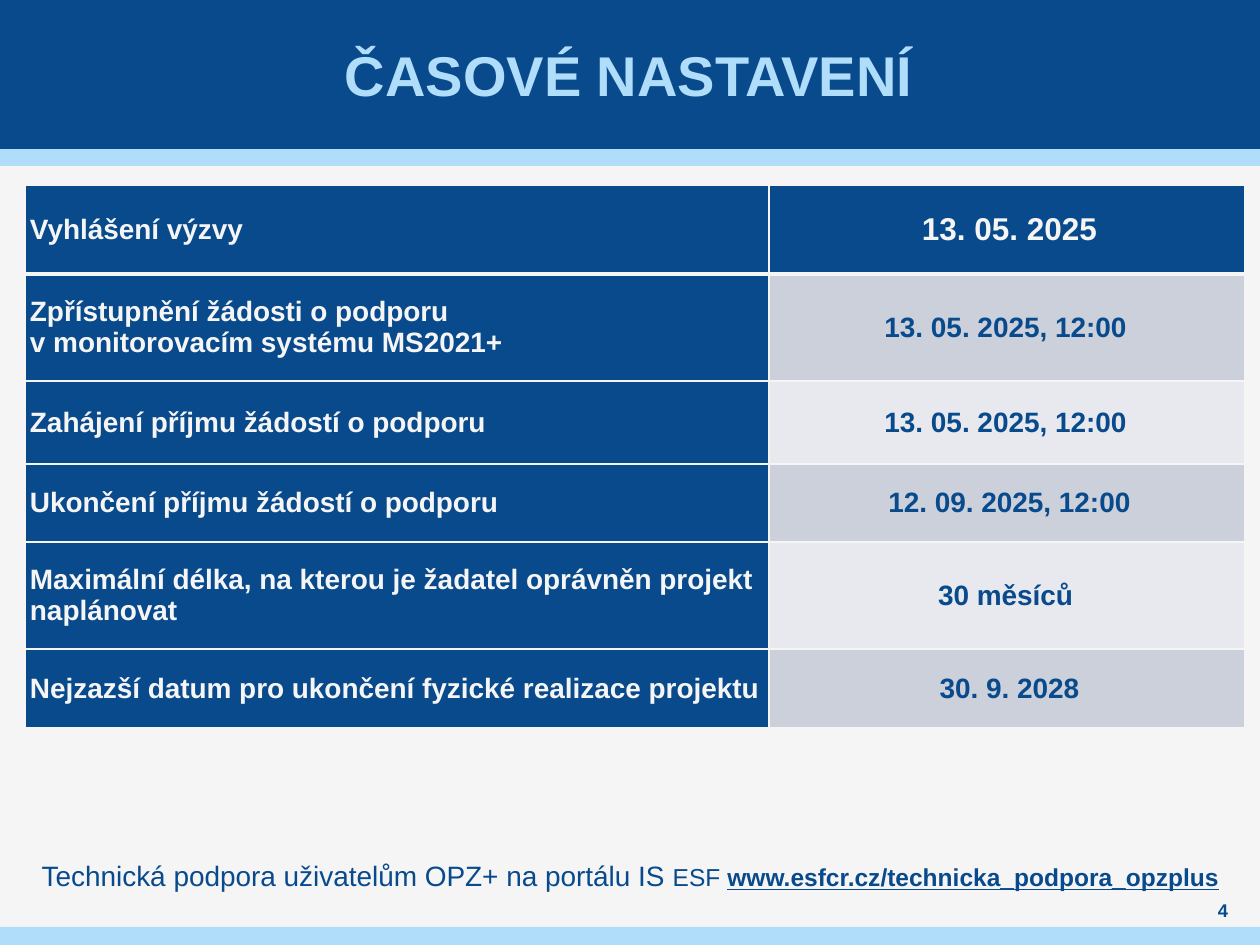
import pptx
import pptx.dml.color
import pptx.enum.shapes
import pptx.enum.text
import pptx.oxml
import pptx.oxml.ns
import pptx.util

PX = 914400 // 126
NAVY = pptx.dml.color.RGBColor(0x08, 0x4A, 0x8B)
SKY = pptx.dml.color.RGBColor(0xAF, 0xDD, 0xFA)
PAPER = pptx.dml.color.RGBColor(0xF5, 0xF5, 0xF5)
BANDS = [
    pptx.dml.color.RGBColor(0xE7, 0xE9, 0xEE),
    pptx.dml.color.RGBColor(0xCC, 0xD0, 0xDA),
]
LEFT = pptx.enum.text.PP_ALIGN.LEFT
CENTER = pptx.enum.text.PP_ALIGN.CENTER
MIDDLE = pptx.enum.text.MSO_ANCHOR.MIDDLE
TOP = pptx.enum.text.MSO_ANCHOR.TOP

TITLE = "ČASOVÉ NASTAVENÍ"
BARS = [
    ((0, 149, 1260, 17), SKY),
    ((0, 0, 1260, 149), NAVY),
    ((0, 927, 1260, 18), SKY),
]
SCHEDULE = [
    ("Vyhlášení výzvy", "13. 05. 2025", 89),
    ("Zpřístupnění žádosti o podporu \vv monitorovacím systému MS2021+", "13. 05. 2025, 12:00 ", 107),
    ("Zahájení příjmu žádostí o podporu", "13. 05. 2025, 12:00 ", 83),
    ("Ukončení příjmu žádostí o podporu", "12. 09. 2025, 12:00", 78),
    ("Maximální délka, na kterou je žadatel oprávněn projekt naplánovat", "30 měsíců ", 107),
    ("Nejzazší datum pro ukončení fyzické realizace projektu", "30. 9. 2028", 79),
]
COLUMN_WIDTHS = [744, 476]
SUPPORT = [
    ("Technická podpora uživatelům OPZ+ na portálu IS ", {"size": 16}),
    ("ESF ", {"size": 14}),
    ("www.esfcr.cz/technicka_podpora_opzplus", {"size": 14, "bold": True, "underline": True}),
]
PAGE_NUMBER = [("4", {"size": 10.5, "bold": True})]


def scaled(box):
    return [length * PX for length in box]


def format_frame(frame, anchor, side=0):
    settings = {
        "word_wrap": True,
        "vertical_anchor": anchor,
        "margin_left": side * PX,
        "margin_right": side * PX,
        "margin_top": 0,
        "margin_bottom": 0,
    }
    for name, value in settings.items():
        setattr(frame, name, value)


def write_runs(paragraph, runs, color, alignment, spacing=0):
    paragraph.alignment = alignment
    paragraph.space_before = paragraph.space_after = pptx.util.Pt(spacing)
    for text, style in runs:
        first = len(paragraph.runs)
        for index, line in enumerate(text.split("\v")):
            if index:
                paragraph.add_line_break()
            paragraph.add_run().text = line
        for run in paragraph.runs[first:]:
            run.font.color.rgb = color
            values = {"name": "Arial", **style, "size": pptx.util.Pt(style["size"])}
            for name, value in values.items():
                setattr(run.font, name, value)


def add_text(slide, box, runs, anchor, spacing=0):
    frame = slide.shapes.add_textbox(*scaled(box)).text_frame
    format_frame(frame, anchor)
    write_runs(frame.paragraphs[0], runs, NAVY, CENTER, spacing)


def add_borders(cell, bottom_points, top_points):
    properties = cell._tc.get_or_add_tcPr()
    widths = [("lnL", 1), ("lnR", 1), ("lnT", top_points), ("lnB", bottom_points)]
    for index, (tag, points) in enumerate(widths):
        line = pptx.oxml.parse_xml(
            f'<a:{tag} {pptx.oxml.ns.nsdecls("a")} w="{points * 12700}">'
            f'<a:solidFill><a:srgbClr val="{PAPER}"/></a:solidFill></a:{tag}>'
        )
        properties.insert(index, line)


def add_schedule(slide):
    heights = [height for _, _, height in SCHEDULE]
    box = (25, 185, sum(COLUMN_WIDTHS), sum(heights))
    table = slide.shapes.add_table(len(SCHEDULE), len(COLUMN_WIDTHS), *scaled(box)).table
    for column, width in zip(table.columns, COLUMN_WIDTHS):
        column.width = width * PX
    for row_index, (label, date, height) in enumerate(SCHEDULE):
        table.rows[row_index].height = height * PX
        is_header = row_index == 0
        date_fill = NAVY if is_header else BANDS[row_index % 2]
        date_color = PAPER if is_header else NAVY
        cells = [
            (label, 16, NAVY, PAPER, LEFT),
            (date, 18 if is_header else 16, date_fill, date_color, CENTER),
        ]
        for column_index, (text, size, fill, color, alignment) in enumerate(cells):
            cell = table.cell(row_index, column_index)
            margins = {"left": 5 * PX, "right": 0, "top": 0, "bottom": 0}
            for side, margin in margins.items():
                setattr(cell, f"margin_{side}", margin)
            cell.vertical_anchor = MIDDLE
            cell.fill.solid()
            cell.fill.fore_color.rgb = fill
            runs = [(text, {"size": size, "bold": True})]
            write_runs(cell.text_frame.paragraphs[0], runs, color, alignment, 3)
            add_borders(cell, 3 if is_header else 1, 3 if row_index == 1 else 1)


def main():
    presentation = pptx.Presentation()
    presentation.slide_width, presentation.slide_height = scaled((1260, 945))
    slide = presentation.slides.add_slide(presentation.slide_layouts[5])
    slide.background.fill.solid()
    slide.background.fill.fore_color.rgb = PAPER

    title = slide.shapes.title
    for box, color in BARS:
        bar = slide.shapes.add_shape(pptx.enum.shapes.MSO_SHAPE.RECTANGLE, *scaled(box))
        bar.shadow.inherit = False
        bar.fill.solid()
        bar.fill.fore_color.rgb = color
        bar.line.fill.background()
        title._element.addprevious(bar._element)

    title.left, title.top, title.width, title.height = scaled((49, 0, 1160, 149))
    format_frame(title.text_frame, MIDDLE, 5)
    title_runs = [(TITLE, {"size": 32, "bold": True})]
    write_runs(title.text_frame.paragraphs[0], title_runs, SKY, CENTER)

    add_schedule(slide)
    add_text(slide, (25, 859, 1211, 59), SUPPORT, TOP, 6)
    add_text(slide, (1191, 898, 64, 25), PAGE_NUMBER, MIDDLE)
    presentation.save("out.pptx")


if __name__ == "__main__":
    main()
